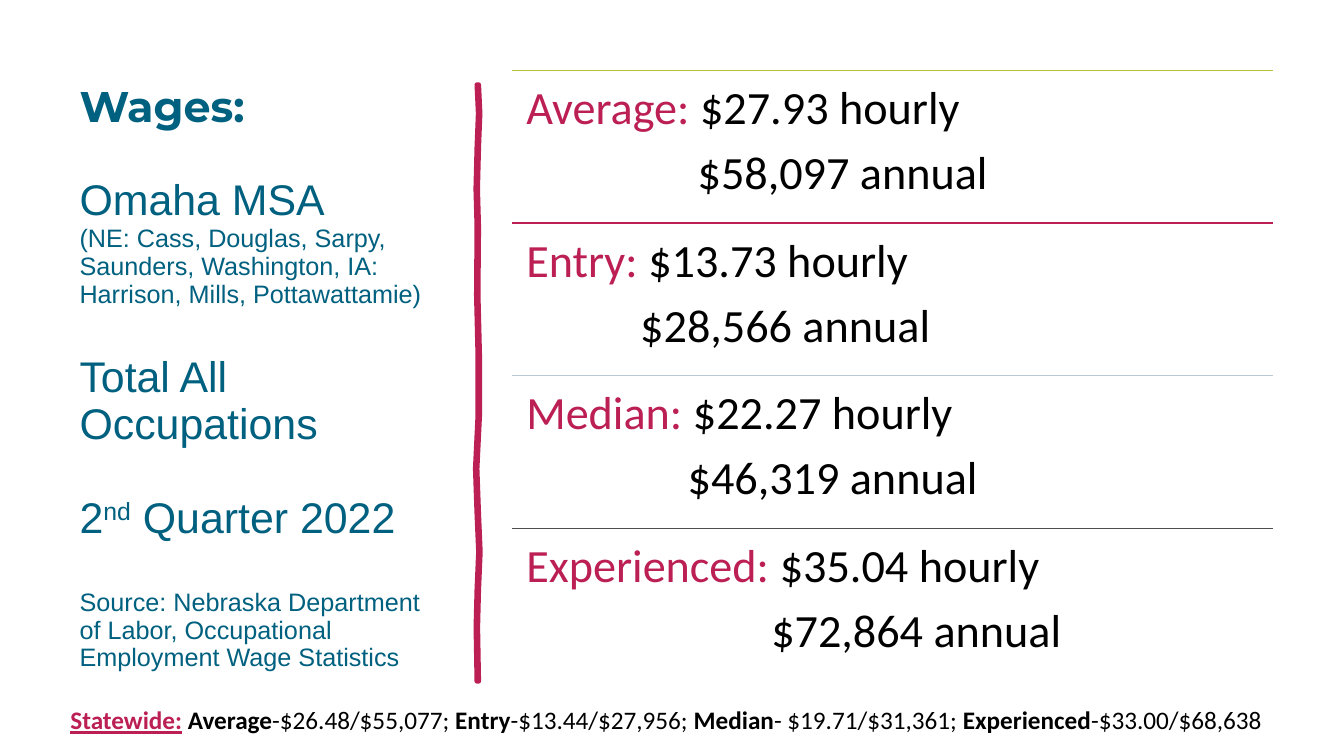
from dataclasses import dataclass

from lxml import etree
from pptx import Presentation
from pptx.dml.color import RGBColor as Color
from pptx.enum.shapes import MSO_CONNECTOR as Connector
from pptx.enum.text import MSO_ANCHOR as Anchor
from pptx.oxml.ns import qn
from pptx.util import Inches, Pt


@dataclass(frozen=True)
class Theme:
    white: str = "FFFFFF"
    black: str = "000000"
    teal: str = "00607F"
    crimson: str = "BB1F53"
    lime: str = "BABF33"
    mist: str = "B9C8D3"
    slate: str = "4D4D4F"
    heading_font: str = "Montserrat"
    side_font: str = "Arial"
    body_font: str = "Calibri"
    side_size: float = 30.6
    wage_size: float = 33
    small_size: float = 18
    side_gap: float = 33
    wage_gap: float = 11


@dataclass(frozen=True)
class Span:
    text: str
    color: str
    bold: bool = False
    underline: bool = False
    raised: bool = False


class WageSlide:
    """Draws on one page; places and lengths are percentages of its size."""

    def __init__(self, deck, theme):
        self.deck, self.theme = deck, theme
        self.page = deck.slides.add_slide(deck.slide_layouts[6])
        fill = self.page.background.fill
        fill.solid()
        fill.fore_color.rgb = Color.from_string(theme.white)

    def across(self, share):
        return round(self.deck.slide_width * share / 100)

    def down(self, share):
        return round(self.deck.slide_height * share / 100)

    def box(self, left, top, width, height, anchor=Anchor.TOP, inset=None):
        frame = self.page.shapes.add_textbox(
            self.across(left), self.down(top), self.across(width), self.down(height)
        ).text_frame
        frame.word_wrap = True
        frame.vertical_anchor = anchor
        if inset is not None:
            frame.margin_left = frame.margin_right = Inches(inset)
            frame.margin_top = frame.margin_bottom = Inches(inset)
        return frame

    def add_spans(self, para, spans, font, size, spacing=1.0):
        para.line_spacing = spacing
        for span in spans:
            run = para.add_run()
            run.text = span.text
            run.font.name, run.font.size = font, Pt(size)
            run.font.bold, run.font.underline = span.bold, span.underline
            run.font.color.rgb = Color.from_string(span.color)
            if span.raised:
                run._r.get_or_add_rPr().set("baseline", "30000")

    def divider(self, left, top, width, color):
        line = self.page.shapes.add_connector(
            Connector.STRAIGHT, self.across(left), self.down(top),
            self.across(left + width), self.down(top))
        line.line.color.rgb = Color.from_string(color)
        line.line.width = Pt(1)
        etree.SubElement(line._element.spPr, qn("a:effectLst"))

    def brush_stroke(self, points, thickness, color):
        """Draw a hand-drawn vertical stroke along its left-edge points."""
        edge = [(self.across(x), self.down(y)) for x, y in points]
        right = [(x + self.across(thickness), y) for x, y in reversed(edge)]
        builder = self.page.shapes.build_freeform(*edge[0])
        builder.add_line_segments(edge[1:] + right, close=True)
        stroke = builder.convert_to_shape()
        stroke.shadow.inherit = False
        stroke.fill.solid()
        stroke.fill.fore_color.rgb = Color.from_string(color)
        stroke.line.color.rgb = Color.from_string(color)
        stroke.line.width = Pt(3.25)


def add_side_heading(slide):
    theme = slide.theme

    def teal(text, **style):
        return Span(text, theme.teal, **style)

    # spans, font, size, starts a new group
    lines = [
        ([teal("Wages:", bold=True)], theme.heading_font, theme.side_size, False),
        ([teal("Omaha MSA")], theme.side_font, theme.side_size, True),
        ([teal("(NE: Cass, Douglas, Sarpy, Saunders, Washington, IA: "
               "Harrison, Mills, Pottawattamie)")],
         theme.side_font, theme.small_size, False),
        ([teal("Total All Occupations")], theme.side_font, theme.side_size, True),
        ([teal("2"), teal("nd", raised=True), teal(" Quarter 2022")],
         theme.side_font, theme.side_size, True),
        ([teal("Source: Nebraska Department of Labor, Occupational "
               "Employment Wage Statistics")],
         theme.side_font, theme.small_size, True),
    ]
    frame = slide.box(5.18, 9.33, 28.06, 81.47, Anchor.MIDDLE)
    for index, (spans, font, size, new_group) in enumerate(lines):
        para = frame.add_paragraph() if index else frame.paragraphs[0]
        slide.add_spans(para, spans, font, size, 0.92)
        if new_group:
            para.space_before = Pt(theme.side_gap)


def add_wage_rows(slide):
    theme = slide.theme
    left, top, width, height = 38.11, 9.33, 56.64, 20.18
    # label, hourly, annual, indent of the annual line in inches, divider colour
    rows = [
        ("Average: ", "$27.93", "$58,097", 1.70, theme.lime),
        ("Entry: ", "$13.73", "$28,566", 1.13, theme.crimson),
        ("Median: ", "$22.27", "$46,319", 1.60, theme.mist),
        ("Experienced: ", "$35.04", "$72,864", 2.43, theme.slate),
    ]
    for index, (label, hourly, annual, indent, color) in enumerate(rows):
        row_top = top + index * height
        slide.divider(left, row_top, width, color)
        frame = slide.box(left, row_top, width, height, inset=0.14)
        first, second = frame.paragraphs[0], frame.add_paragraph()
        slide.add_spans(first, [Span(label, theme.crimson),
                                Span(f"{hourly} hourly", theme.black)],
                        theme.body_font, theme.wage_size, 0.9)
        first.space_after = Pt(theme.wage_gap)
        slide.add_spans(second, [Span(f"{annual} annual", theme.black)],
                        theme.body_font, theme.wage_size, 0.9)
        second._p.get_or_add_pPr().set("marL", str(Inches(indent)))


def add_statewide(slide):
    theme = slide.theme
    wages = [("Average", "-$26.48/$55,077; "), ("Entry", "-$13.44/$27,956; "),
             ("Median", "- $19.71/$31,361; "), ("Experienced", "-$33.00/$68,638")]
    spans = [Span("Statewide:", theme.crimson, bold=True, underline=True),
             Span(" ", theme.crimson, bold=True)]
    for label, amounts in wages:
        spans += [Span(label, theme.black, bold=True), Span(amounts, theme.black)]
    frame = slide.box(4.5, 92.53, 91.07, 5.33)
    slide.add_spans(frame.paragraphs[0], spans, theme.body_font, theme.small_size)


def main():
    deck = Presentation()
    deck.slide_width, deck.slide_height = Inches(13.33), Inches(7.5)
    slide = WageSlide(deck, Theme())
    add_side_heading(slide)
    slide.brush_stroke(
        [(35.48, 11.2), (35.58, 15), (35.48, 19.5), (35.4, 25), (35.48, 30),
         (35.44, 39), (35.55, 47), (35.55, 55), (35.36, 62), (35.48, 68),
         (35.6, 73), (35.48, 78), (35.41, 83), (35.48, 90.13)],
        0.15, slide.theme.crimson)
    add_wage_rows(slide)
    add_statewide(slide)
    deck.save("out.pptx")


if __name__ == "__main__":
    main()
